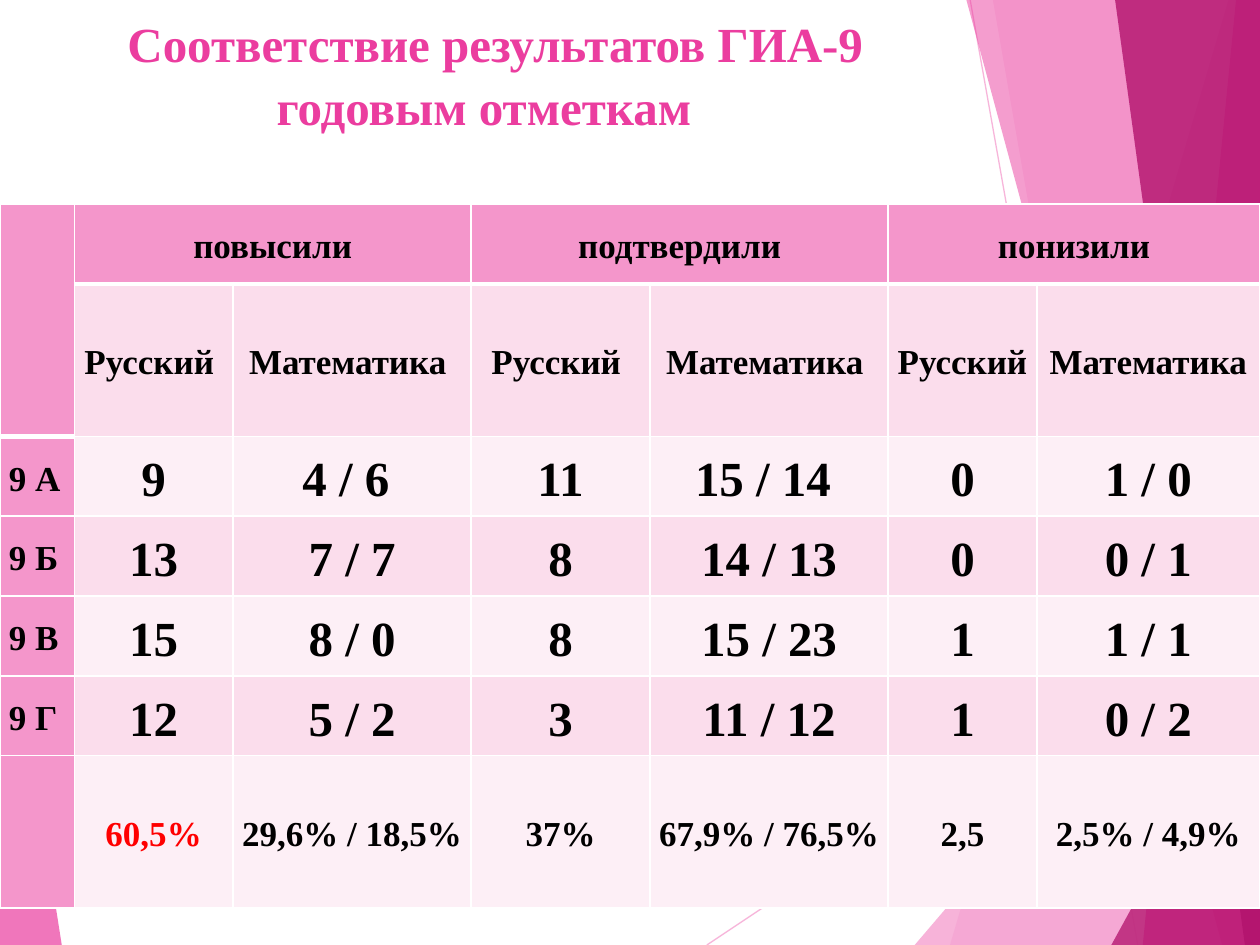
from pptx import Presentation
from pptx.dml.color import RGBColor
from pptx.enum.shapes import MSO_CONNECTOR
from pptx.enum.text import MSO_ANCHOR, MSO_AUTO_SIZE, PP_ALIGN
from pptx.oxml.ns import qn
from pptx.util import Inches, Pt
from lxml.etree import SubElement, Element

WHITE = RGBColor(0xFF, 0xFF, 0xFF)
BLACK = RGBColor(0x00, 0x00, 0x00)
RED = RGBColor(0xFF, 0x00, 0x00)
PINK = RGBColor(0xF4, 0x96, 0xCB)
ROSE = RGBColor(0xEB, 0x3D, 0x9F)
CRIMSON = RGBColor(0xB2, 0x13, 0x6D)
BAND_DARK = RGBColor(0xFB, 0xDD, 0xEC)
BAND_LIGHT = RGBColor(0xFD, 0xEF, 0xF6)

RAYS = [((56.1, 100), (100, 61)), ((77, 0), (90.3, 100))]
FACETS = [
    (PINK, 36, [(97.5, 0), (75.4, 100), (100, 100), (100, 0)]),
    (PINK, 20, [(78.8, 0), (91.9, 100), (100, 100), (100, 0)]),
    (PINK, 72, [(72.6, 100), (100, 57.2), (100, 100)]),
    (ROSE, 50, [(76.7, 0), (97, 100), (100, 100), (100, 0)]),
    (ROSE, 66, [(98.1, 0), (90.7, 100), (100, 100), (100, 0)]),
    (CRIMSON, 80, [(88.5, 0), (98.8, 100), (100, 100), (100, 0)]),
    (CRIMSON, 76, [(88.2, 100), (100, 71.3), (100, 100)]),
    (ROSE, 70, [(0, 58.5), (4.9, 100), (0, 100)]),
]

COLUMNS = [5.9, 12.6, 18.9, 14.2, 18.9, 11.8, 17.7]
ROWS = [8.45, 16.13, 8.45, 8.45, 8.45, 8.45, 16.13]
RESULTS = [
    ["", "повысили", "", "подтвердили", "", "понизили", ""],
    [""] + ["Русский ", "Математика "] * 3,
    ["9 А", "9", "4 / 6 ", "11", "15 / 14 ", "0", "1 / 0"],
    ["9 Б", "13", "7 / 7", "8", "14 / 13", "0", "0 / 1"],
    ["9 В", "15", "8 / 0", "8", "15 / 23", "1", "1 / 1"],
    ["9 Г", "12", "5 / 2", "3", "11 / 12", "1", "0 / 2"],
    ["", "60,5%", "29,6% / 18,5%", "37%", "67,9% / 76,5%", "2,5", "2,5% / 4,9%"],
]
MERGES = [((0, 0), (1, 0))] + [((0, c), (0, c + 1)) for c in (1, 3, 5)]


class SlideBuilder:
    font = "Times New Roman"
    label_size = 20
    large_size = 28

    def __init__(self, presentation):
        self.width = presentation.slide_width
        self.height = presentation.slide_height
        self.slide = presentation.slides.add_slide(presentation.slide_layouts[5])

    def x(self, percent):
        return round(self.width * percent / 100)

    def y(self, percent):
        return round(self.height * percent / 100)

    def point(self, position):
        return self.x(position[0]), self.y(position[1])

    def set_alpha(self, fill_parent, percent):
        color = fill_parent.find(qn("a:solidFill")).find(qn("a:srgbClr"))
        SubElement(color, qn("a:alpha"), val=str(percent * 1000))

    def add_run(self, paragraph, text, size, color):
        run = paragraph.add_run()
        run.text = text
        run.font.name = self.font
        run.font.size = Pt(size)
        run.font.bold = True
        run.font.color.rgb = color

    def ray(self, start, end):
        connector = self.slide.shapes.add_connector(
            MSO_CONNECTOR.STRAIGHT, *self.point(start), *self.point(end))
        connector.line.color.rgb = PINK
        connector.line.width = Pt(0.75)
        properties = connector._element.spPr
        self.set_alpha(properties.find(qn("a:ln")), 70)
        SubElement(properties, qn("a:effectLst"))

    def facet(self, color, alpha, corners):
        first, *others = [self.point(corner) for corner in corners]
        builder = self.slide.shapes.build_freeform(*first)
        builder.add_line_segments(others, close=True)
        shape = builder.convert_to_shape()
        shape.shadow.inherit = False
        shape.fill.solid()
        shape.fill.fore_color.rgb = color
        shape.line.fill.background()
        self.set_alpha(shape._element.spPr, alpha)

    def title(self, text, left, top, width, height):
        shape = self.slide.shapes.title
        shape.left, shape.top = self.point((left, top))
        shape.width, shape.height = self.point((width, height))
        frame = shape.text_frame
        frame.word_wrap = True
        frame.auto_size = MSO_AUTO_SIZE.NONE
        frame.vertical_anchor = MSO_ANCHOR.TOP
        paragraph = frame.paragraphs[0]
        paragraph.alignment = PP_ALIGN.CENTER
        paragraph.line_spacing = 1.07
        paragraph._p.get_or_add_pPr().set("indent", str(self.x(1.8)))
        self.add_run(paragraph, text, self.large_size, ROSE)

    def borders(self, cell, bottom):
        properties = cell._tc.get_or_add_tcPr()
        for index, side in enumerate(("lnL", "lnR", "lnT", "lnB")):
            points = bottom if side == "lnB" else 1
            line = Element(qn("a:" + side), w=str(Pt(points)))
            fill = SubElement(line, qn("a:solidFill"))
            SubElement(fill, qn("a:srgbClr"), val=str(WHITE))
            properties.insert(index, line)

    def cell(self, cell, text, fill, align, size, color, bottom):
        cell.fill.solid()
        cell.fill.fore_color.rgb = fill
        cell.vertical_anchor = MSO_ANCHOR.MIDDLE
        cell.margin_left = cell.margin_right = Inches(0.07)
        cell.margin_top = cell.margin_bottom = 0
        self.borders(cell, bottom)
        if text:
            paragraph = cell.text_frame.paragraphs[0]
            paragraph.alignment = align
            paragraph.line_spacing = 1.15
            self.add_run(paragraph, text, size, color)

    def results_table(self, top):
        table = self.slide.shapes.add_table(
            len(ROWS), len(COLUMNS), 0, self.y(top),
            self.x(sum(COLUMNS)), self.y(sum(ROWS))).table
        for column, share in zip(table.columns, COLUMNS):
            column.width = self.x(share)
        for row, share in zip(table.rows, ROWS):
            row.height = self.y(share)
        for first, last in MERGES:
            table.cell(*first).merge(table.cell(*last))
        for r, texts in enumerate(RESULTS):
            for c, text in enumerate(texts):
                band = BAND_DARK if r % 2 else BAND_LIGHT
                is_score = 2 <= r <= 5 and c > 0
                self.cell(
                    table.cell(r, c), text,
                    fill=PINK if r == 0 or c == 0 else band,
                    align=PP_ALIGN.CENTER if c else PP_ALIGN.JUSTIFY,
                    size=self.large_size if is_score else self.label_size,
                    color=RED if (r, c) == (6, 1) else BLACK,
                    bottom=3 if r == 0 or (r, c) == (1, 0) else 1)


def main():
    presentation = Presentation()
    presentation.slide_width = Inches(10)
    presentation.slide_height = Inches(7.5)
    builder = SlideBuilder(presentation)
    for start, end in RAYS:
        builder.ray(start, end)
    for color, alpha, corners in FACETS:
        builder.facet(color, alpha, corners)
    builder.results_table(top=21.6)
    builder.title("Соответствие результатов ГИА-9 годовым отметкам", 0, 0.3, 76.8, 12.9)
    presentation.save("out.pptx")


if __name__ == "__main__":
    main()
